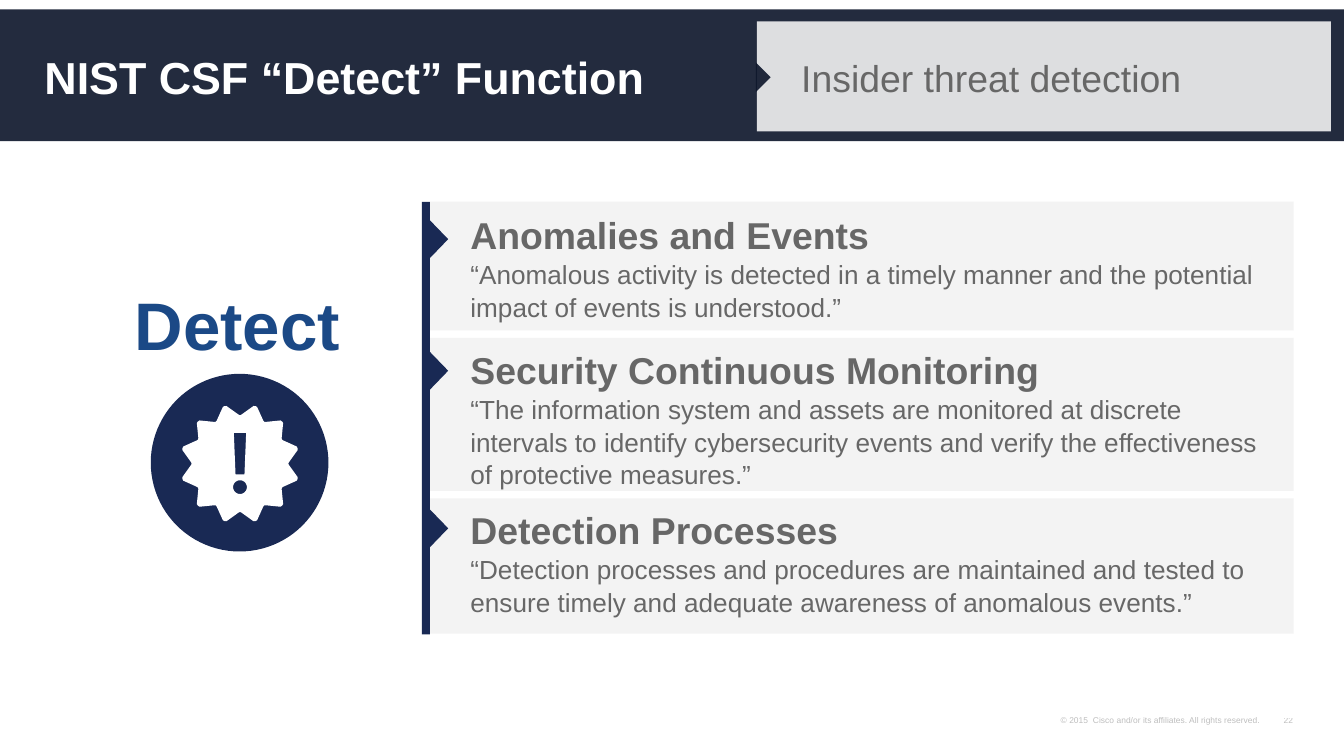
from math import cos, radians, sin

from lxml.etree import SubElement
from pptx import Presentation
from pptx.dml.color import RGBColor
from pptx.enum.shapes import MSO_SHAPE as Preset
from pptx.enum.text import MSO_ANCHOR as Anchor
from pptx.enum.text import MSO_AUTO_SIZE as AutoSize
from pptx.enum.text import PP_ALIGN as Align
from pptx.oxml.ns import qn
from pptx.util import Pt

NAVY = RGBColor(0x19, 0x29, 0x54)
MIDNIGHT = RGBColor(0x0C, 0x15, 0x2A)
BLUE = RGBColor(0x1B, 0x49, 0x86)
PALE = RGBColor(0xF2, 0xF2, 0xF2)
GREY = RGBColor(0x67, 0x67, 0x67)
WHITE = RGBColor(0xFF, 0xFF, 0xFF)
BLACK = RGBColor(0x00, 0x00, 0x00)

CARD_LEFT, CARD_TOP, CARD_WIDTH, CARD_GAP = 230.4, 108, 462.6, 4
CARD_INSETS = (21.6, 3.6, 7.2, 3.6)
HEADER_INSETS = (23.8, 5, 9.4, 5)
FOOTER_INSETS = (3.6, 2.2, 3.6, 2.2)
CARDS = [
    (69, 15.1, Anchor.MIDDLE, "Anomalies and Events",
     "“Anomalous activity is detected in a timely manner and the potential "
     "impact of events is understood.”"),
    (82, 12.6, Anchor.TOP, "Security Continuous Monitoring",
     "“The information system and assets are monitored at discrete intervals "
     "to identify cybersecurity events and verify the effectiveness of "
     "protective measures.”"),
    (72.5, 11, Anchor.TOP, "Detection Processes",
     "“Detection processes and procedures are maintained and tested to ensure "
     "timely and adequate awareness of anomalous events.”"),
]


def set_opacity(fill_parent, percent):
    color = fill_parent.find(qn("a:solidFill"))[0]
    SubElement(color, qn("a:alpha")).set("val", str(percent * 1000))


def paint(shape, color, opacity=100):
    shape.shadow.inherit = False
    shape.fill.solid()
    shape.fill.fore_color.rgb = color
    shape.line.fill.background()
    if opacity < 100:
        set_opacity(shape._element.spPr, opacity)


def add_block(slide, preset, box, color, opacity=100, rotation=0):
    shape = slide.shapes.add_shape(preset, *map(Pt, box))
    shape.rotation = rotation
    paint(shape, color, opacity)
    return shape


def set_frame(shape, insets, anchor=Anchor.TOP, wrap=True, grow=False):
    frame = shape.text_frame
    frame.margin_left, frame.margin_top, frame.margin_right, frame.margin_bottom = map(Pt, insets)
    frame.vertical_anchor = anchor
    frame.word_wrap = wrap
    frame.auto_size = AutoSize.SHAPE_TO_FIT_TEXT if grow else AutoSize.NONE


def write(paragraph, text, size, color, bold=False, align=Align.LEFT, spacing=1.05, opacity=100):
    paragraph.alignment = align
    paragraph.line_spacing = spacing
    run = paragraph.add_run()
    run.text = text
    font = run.font
    font.name, font.size, font.bold = "Arial", Pt(size), bold
    font.color.rgb = color
    if opacity < 100:
        set_opacity(run._r.rPr, opacity)


def add_label(slide, box, text, insets, anchor=Anchor.TOP, wrap=True, **text_format):
    label = slide.shapes.add_textbox(*map(Pt, box))
    set_frame(label, insets, anchor, wrap, grow=True)
    write(label.text_frame.paragraphs[0], text, **text_format)


def add_header_panel(slide, box, background, text, **text_format):
    panel = add_block(slide, Preset.RECTANGLE, box, background, opacity=90)
    set_frame(panel, HEADER_INSETS, Anchor.MIDDLE)
    write(panel.text_frame.paragraphs[0], text, **text_format)


def add_card(slide, top, height, anchor, heading, body):
    card = add_block(slide, Preset.RECTANGLE, (CARD_LEFT, top, CARD_WIDTH, height), PALE, opacity=90)
    set_frame(card, CARD_INSETS, anchor)
    frame = card.text_frame
    write(frame.paragraphs[0], heading, size=20, color=GREY, bold=True)
    write(frame.add_paragraph(), body, size=14, color=GREY)


def polar(center_x, center_y, radius, degrees):
    angle = radians(degrees)
    return center_x + radius * sin(angle), center_y - radius * cos(angle)


def add_alert_badge(slide, center_x, center_y):
    profile = [(-1.6, 26.2), (0, 25.9), (1.6, 26.2), (13.2, 31.7), (15, 31.9), (16.8, 31.7)]
    burst = [polar(center_x, center_y, radius, 30 * tooth + offset)
             for tooth in range(12) for offset, radius in profile]
    stem = [(center_x + x, center_y + y)
            for x, y in [(3.3, -16.5), (2.4, 5.8), (-2.4, 5.8), (-3.3, -16.5)]]
    dot = [polar(center_x, center_y + 12.6, 3.7, degrees) for degrees in range(0, 360, 15)]
    contours = [[(Pt(x), Pt(y)) for x, y in contour] for contour in (burst, stem, dot)]
    builder = slide.shapes.build_freeform(*contours[0][0])
    builder.add_line_segments(contours[0][1:])
    for contour in contours[1:]:
        builder.move_to(*contour[0])
        builder.add_line_segments(contour[1:])
    paint(builder.convert_to_shape(), WHITE)


def main():
    presentation = Presentation()
    presentation.slide_width, presentation.slide_height = Pt(720), Pt(405)
    slide = presentation.slides.add_slide(presentation.slide_layouts[6])

    footer = dict(insets=FOOTER_INSETS, anchor=Anchor.BOTTOM, size=4.5, color=BLACK,
                  align=Align.RIGHT, spacing=1, opacity=25)
    add_label(slide, (683.3, 381.6, 13, 9.4), "22", wrap=False, **footer)
    add_label(slide, (470.2, 381.6, 209.5, 9.4),
              "© 2015  Cisco and/or its affiliates. All rights reserved. ", **footer)

    add_block(slide, Preset.RECTANGLE, (112.3, 221.8, 231.8, 4.3), NAVY, rotation=270)
    add_label(slide, (45.4, 146.9, 163.4, 49), "Detect", (0, 2.9, 0, 2.9),
              size=36, color=BLUE, bold=True, align=Align.CENTER)
    add_block(slide, Preset.OVAL, (80.8, 200.3, 95.2, 95.2), NAVY)
    add_alert_badge(slide, 128.6, 248.4)

    top = CARD_TOP
    for height, marker_offset, anchor, heading, body in CARDS:
        add_card(slide, top, height, anchor, heading, body)
        add_block(slide, Preset.ISOSCELES_TRIANGLE, (224.6, top + marker_offset, 20.9, 10.1),
                  NAVY, rotation=90)
        top += height + CARD_GAP

    add_header_panel(slide, (0, 5, 720, 70.6), MIDNIGHT, "NIST CSF “Detect” Function",
                     size=24, color=WHITE, bold=True)
    add_header_panel(slide, (405.4, 11.4, 307.6, 59), PALE, "Insider threat detection",
                     size=20, color=GREY)
    add_block(slide, Preset.ISOSCELES_TRIANGLE, (401, 37.4, 15.8, 7.9), MIDNIGHT,
              opacity=90, rotation=90)

    presentation.save("out.pptx")


if __name__ == "__main__":
    main()
